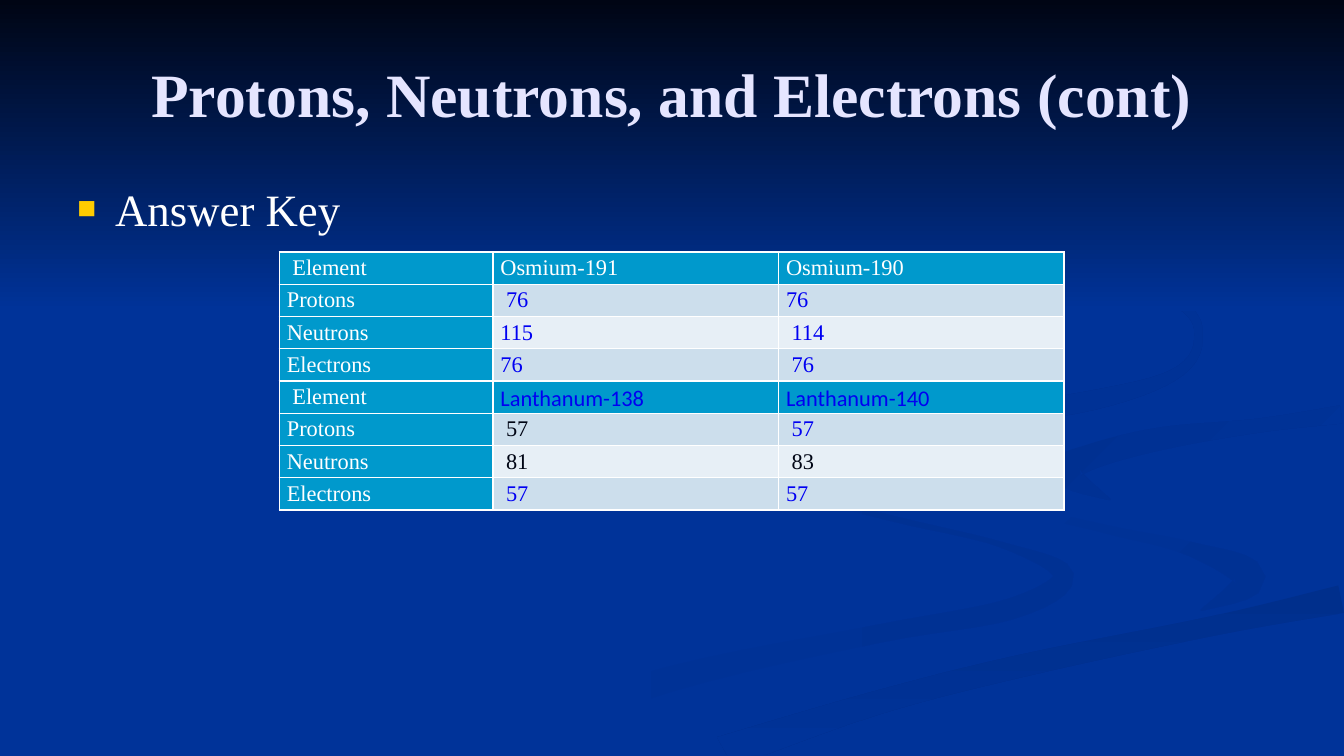
import math
from collections import namedtuple

from lxml import etree
from pptx import Presentation, util as u
from pptx.dml.color import RGBColor
from pptx.enum import shapes, text
from pptx.oxml import ns

COLORS = {
    "back": "003399", "night": "000514", "title": "E5E5FF", "white": "FFFFFF",
    "bullet": "FFCC00", "header": "0099CC", "odd": "CCDEEC", "even": "E7EFF6",
    "blue": "0000F2", "shade": "003193", "shade_deep": "002F8C",
    "shade_right": "003091", "shade_top": "002F8E",
}
SERIF = "Times New Roman"
PAGE_WIDTH, PAGE_HEIGHT = 960, 540
SKY_HEIGHT = 222
MARGIN = 48
TABLE_LEFT, TABLE_TOP = 199.5, 180
COLUMN_WIDTHS = (152.6, 204, 204)
ROW_HEIGHT = 23.04
CURVE_STEPS = 6

Station = namedtuple("Station", "x y thickness")
Ribbon = namedtuple("Ribbon", "start end angle stations")

RIBBONS = {
    "left bend": Ribbon("back", "shade", 0, [
        (552, 332, 3), (578, 354, 3), (640, 371, 4), (715, 389, 4), (760, 411, 14),
        (722, 435, 15), (626, 453, 13), (479, 485, 18), (318, 538, 24)]),
    "right bend": Ribbon("back", "shade", 45, [
        (695, 337, 1), (730, 362, 5), (790, 378, 6), (850, 392, 10), (893, 413, 22),
        (858, 436, 1)]),
    "river bank": Ribbon("shade_deep", "back", 90, [
        (958, 428, 20), (867, 447, 14), (728, 476, 16), (623, 503, 17), (516, 538, 24)]),
    "far bend": Ribbon("shade_right", "back", 45, [
        (958, 296, 13), (899, 304, 10), (831, 313, 16), (780, 326, 18), (762, 338, 20),
        (793, 357, 1)]),
    "top bend": Ribbon("shade_top", "back", 45, [
        (732, 168, 1), (838, 214, 6), (856, 243, 6), (838, 268, 8), (780, 286, 14),
        (690, 300, 14), (600, 317, 14), (562, 334, 14), (597, 360, 1)]),
}

OSMIUM = [
    [" Element", "Osmium-191", "Osmium-190"],
    ["Protons", " 76", "76"],
    ["Neutrons", "115", " 114"],
    ["Electrons", "76", " 76"],
]
LANTHANUM = [
    [" Element", "Lanthanum-138", "Lanthanum-140"],
    ["Protons", " 57", " 57"],
    ["Neutrons", " 81", " 83"],
    ["Electrons", " 57", "57"],
]
WHITE, DARK, CALIBRI = {"color": "white"}, {"color": "night"}, {"font": "Calibri"}
OSMIUM_FORMATS = {(0, 1): WHITE, (0, 2): WHITE}
LANTHANUM_FORMATS = {
    (0, 1): CALIBRI, (0, 2): CALIBRI, (1, 1): DARK, (2, 1): DARK, (2, 2): DARK}


def rgb(name):
    return RGBColor.from_string(COLORS[name])


def write(frame, words, size=16, color="white", font=SERIF, bold=False,
          align=text.PP_ALIGN.LEFT, spacing=1, before=0):
    para = frame.paragraphs[0]
    para.alignment, para.line_spacing, para.space_before = align, spacing, u.Pt(before)
    span = para.add_run()
    span.text = words
    span.font.size, span.font.name, span.font.bold = u.Pt(size), font, bold
    span.font.color.rgb = rgb(color)
    return para


def paint(shape, start, end, angle):
    shape.shadow.inherit = False
    shape.line.fill.background()
    shape.fill.gradient()
    shape.fill.gradient_angle = -angle % 360
    for stop, name in zip(shape.fill.gradient_stops, (start, end)):
        stop.color.rgb = rgb(name)


def blend(before, start, end, after, t):
    return start + t / 2 * (end - before + t * (
        2 * before - 5 * start + 4 * end - after
        + t * (3 * (start - end) + after - before)))


def smooth_curve(stations):
    padded = [stations[0], *stations, stations[-1]]
    curve = []
    for window in zip(padded, padded[1:], padded[2:], padded[3:]):
        for step in range(CURVE_STEPS):
            t = step / CURVE_STEPS
            curve.append(Station(*(blend(*values, t) for values in zip(*window))))
    return curve + [Station(*stations[-1])]


def ribbon_outline(stations):
    curve = smooth_curve(stations)
    left_bank, right_bank = [], []
    for i, point in enumerate(curve):
        behind, ahead = curve[max(i - 1, 0)], curve[min(i + 1, len(curve) - 1)]
        heading = math.atan2(ahead.y - behind.y, ahead.x - behind.x)
        across = point.thickness / 2 * math.sin(heading)
        down = point.thickness / 2 * math.cos(heading)
        left_bank.append((point.x + across, point.y - down))
        right_bank.append((point.x - across, point.y + down))
    return [(u.Pt(min(x, PAGE_WIDTH)), u.Pt(min(y, PAGE_HEIGHT)))
            for x, y in left_bank + right_bank[::-1]]


def add_ribbon(page, ribbon):
    outline = ribbon_outline(ribbon.stations)
    builder = page.shapes.build_freeform(*outline[0])
    builder.add_line_segments(outline[1:], close=True)
    paint(builder.convert_to_shape(), ribbon.start, ribbon.end, ribbon.angle)


def add_backdrop(page):
    page.background.fill.solid()
    page.background.fill.fore_color.rgb = rgb("back")
    for ribbon in RIBBONS.values():
        add_ribbon(page, ribbon)
    sky = page.shapes.add_shape(
        shapes.MSO_SHAPE.RECTANGLE, 0, 0, u.Pt(PAGE_WIDTH), u.Pt(SKY_HEIGHT))
    paint(sky, "night", "back", 90)


def place(page, box, top, height, anchor):
    page.shapes._spTree.append(box._element)
    box.left, box.width = u.Pt(MARGIN), u.Pt(PAGE_WIDTH - 2 * MARGIN)
    box.top, box.height = u.Pt(top), u.Pt(height)
    box.text_frame.auto_size = text.MSO_AUTO_SIZE.NONE
    box.text_frame.vertical_anchor = anchor
    return box.text_frame


def add_bullet(para):
    props = para._p.get_or_add_pPr()
    props.set("marL", str(u.Pt(27)))
    props.set("indent", str(u.Pt(-27)))
    color = etree.SubElement(props, ns.qn("a:buClr"))
    etree.SubElement(color, ns.qn("a:srgbClr"), val=COLORS["bullet"])
    etree.SubElement(props, ns.qn("a:buSzPct"), val="70000")
    etree.SubElement(props, ns.qn("a:buFont"), typeface=SERIF)
    etree.SubElement(props, ns.qn("a:buChar"), char="■")


def add_borders(cell):
    props = cell._tc.get_or_add_tcPr()
    for index, side in enumerate(("lnL", "lnR", "lnT", "lnB")):
        line = etree.Element(ns.qn("a:" + side), w=str(u.Pt(1)))
        fill = etree.SubElement(line, ns.qn("a:solidFill"))
        etree.SubElement(fill, ns.qn("a:srgbClr"), val=COLORS["white"])
        props.insert(index, line)


def fill_cell(cell, words, background, look):
    cell.margin_left = cell.margin_right = u.Pt(5.4)
    cell.margin_top = cell.margin_bottom = 0
    cell.fill.solid()
    cell.fill.fore_color.rgb = rgb(background)
    write(cell.text_frame, words, spacing=1.15, **look)
    add_borders(cell)


def add_element_table(page, top, rows, formats):
    table = page.shapes.add_table(
        len(rows), len(COLUMN_WIDTHS), u.Pt(TABLE_LEFT), u.Pt(top),
        u.Pt(sum(COLUMN_WIDTHS)), u.Pt(ROW_HEIGHT * len(rows))).table
    for column, width in zip(table.columns, COLUMN_WIDTHS):
        column.width = u.Pt(width)
    for r, row in enumerate(rows):
        table.rows[r].height = u.Pt(ROW_HEIGHT)
        for c, words in enumerate(row):
            banding = "odd" if r % 2 else "even"
            background = "header" if r == 0 or c == 0 else banding
            look = {"color": "blue" if c else "white", **formats.get((r, c), {})}
            fill_cell(table.cell(r, c), words, background, look)


def main():
    deck = Presentation()
    deck.slide_width, deck.slide_height = u.Pt(PAGE_WIDTH), u.Pt(PAGE_HEIGHT)
    page = deck.slides.add_slide(deck.slide_layouts[1])
    add_backdrop(page)
    title = place(page, page.shapes.title, 21.6, 90, text.MSO_ANCHOR.MIDDLE)
    write(title, "Protons, Neutrons, and Electrons (cont)", size=44, color="title",
          bold=True, align=text.PP_ALIGN.CENTER)
    body = place(page, page.placeholders[1], 126, 356.4, text.MSO_ANCHOR.TOP)
    add_bullet(write(body, "Answer Key", size=32, before=6.4))
    add_element_table(page, TABLE_TOP, OSMIUM, OSMIUM_FORMATS)
    add_element_table(page, TABLE_TOP + ROW_HEIGHT * len(OSMIUM), LANTHANUM,
                      LANTHANUM_FORMATS)
    deck.save("out.pptx")


if __name__ == "__main__":
    main()
